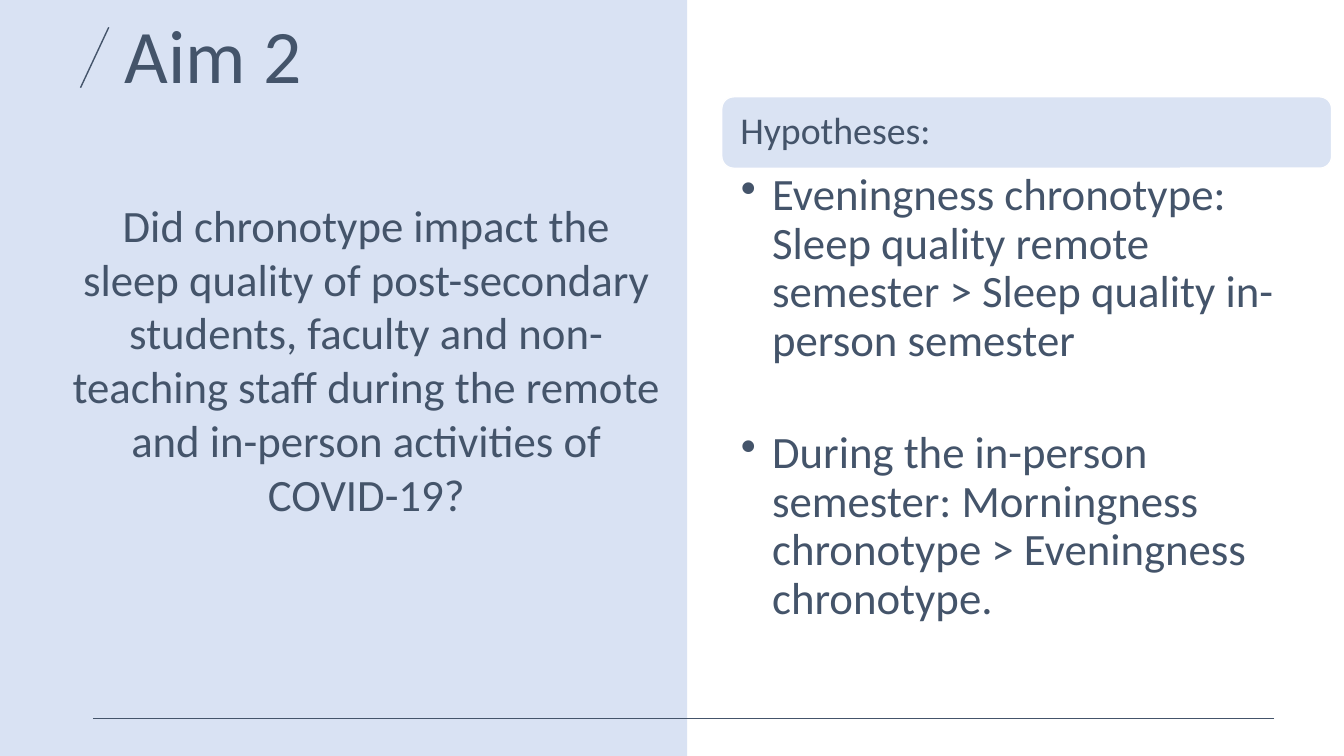
from lxml.etree import SubElement
from pptx import Presentation
from pptx.dml.color import RGBColor
from pptx.enum.shapes import MSO_CONNECTOR, MSO_SHAPE
from pptx.enum.text import MSO_ANCHOR, PP_ALIGN
from pptx.oxml.ns import qn
from pptx.util import Cm, Pt


def color(hex_string):
    return RGBColor.from_string(hex_string)


class SlideBuilder:
    font = "Calibri"
    ink = "44546A"
    accent = "4472C4"
    tint = "DAE3F3"

    def __init__(self, slide):
        self.slide = slide

    def box(self, preset, left, top, width, height, fill, opacity=100, outline=None):
        shape = self.slide.shapes.add_shape(
            preset, Cm(left), Cm(top), Cm(width), Cm(height))
        shape.shadow.inherit = False
        shape.fill.solid()
        shape.fill.fore_color.rgb = color(fill)
        if opacity < 100:
            fill_color = shape._element.spPr.find(qn("a:solidFill"))[0]
            SubElement(fill_color, qn("a:alpha"), val=str(opacity * 1000))
        if outline:
            shape.line.color.rgb = color(outline)
            shape.line.width = Pt(1)
        else:
            shape.line.fill.background()
        return shape

    def text_box(self, left, top, width, height):
        return self.slide.shapes.add_textbox(
            Cm(left), Cm(top), Cm(width), Cm(height))

    def set_text(self, shape, paragraphs, size, align=PP_ALIGN.LEFT, spacing=0.9,
                 anchor=MSO_ANCHOR.TOP, insets=(0.25, 0.13, 0.25, 0.13),
                 bullet_indent=None, gap=0):
        frame = shape.text_frame
        frame.word_wrap = True
        frame.vertical_anchor = anchor
        (frame.margin_left, frame.margin_top,
         frame.margin_right, frame.margin_bottom) = map(Cm, insets)
        frame.text = "\n".join(paragraphs)
        for paragraph in frame.paragraphs:
            paragraph.alignment = align
            paragraph.line_spacing = spacing
            paragraph.space_after = Pt(gap)
            paragraph.font.name = self.font
            paragraph.font.size = Pt(size)
            paragraph.font.color.rgb = color(self.ink)
            if bullet_indent:
                self.add_bullet(paragraph, bullet_indent)

    def add_bullet(self, paragraph, indent):
        properties = paragraph._p.get_or_add_pPr()
        properties.set("marL", str(Cm(indent)))
        properties.set("indent", str(-Cm(indent)))
        bullet = properties.makeelement(qn("a:buChar"), {"char": "•"})
        properties.find(qn("a:defRPr")).addprevious(bullet)

    def line(self, x1, y1, x2, y2):
        connector = self.slide.shapes.add_connector(
            MSO_CONNECTOR.STRAIGHT, Cm(x1), Cm(y1), Cm(x2), Cm(y2))
        connector.line.color.rgb = color(self.ink)
        connector.line.width = Pt(1)
        SubElement(connector._element.spPr, qn("a:effectLst"))


def main():
    presentation = Presentation()
    presentation.slide_width = Cm(33.87)
    presentation.slide_height = Cm(19.05)
    builder = SlideBuilder(
        presentation.slides.add_slide(presentation.slide_layouts[6]))

    # Left panel with the slide title
    builder.box(MSO_SHAPE.RECTANGLE, 0, 0, 17.32, 19.05, builder.accent, opacity=20)
    title = builder.text_box(2.9, 0.41, 13.54, 2.15)
    builder.set_text(title, ["Aim 2"], 54, anchor=MSO_ANCHOR.MIDDLE)
    builder.line(2.74, 0.69, 2.03, 2.21)

    # Hypotheses
    column_left, column_width = 18.19, 15.37
    heading = builder.box(MSO_SHAPE.ROUNDED_RECTANGLE, column_left, 2.44,
                          column_width, 1.8, builder.tint, outline="FFFFFF")
    builder.set_text(heading, ["Hypotheses:"], 27, anchor=MSO_ANCHOR.MIDDLE,
                     insets=(0.38, 0.28, 0.38, 0.28))
    hypotheses = builder.text_box(column_left, 4.24, column_width, 12.12)
    builder.set_text(hypotheses, [
        "Eveningness chronotype: Sleep quality remote semester > "
        "Sleep quality in-person semester",
        "During the in-person semester: Morningness chronotype > "
        "Eveningness chronotype.",
    ], 32, insets=(0.48, 0.1, 0.64, 0.1), bullet_indent=0.79, gap=46)

    # Footer rule
    builder.line(32.11, 18.11, 2.34, 18.11)

    # Research question
    question = builder.text_box(1.55, 4.85, column_width, 9.25)
    builder.set_text(question, [
        "Did chronotype impact the sleep quality of post-secondary students, "
        "faculty and non-teaching staff during the remote and in-person "
        "activities of COVID-19?",
    ], 32, align=PP_ALIGN.CENTER, spacing=1.0)

    presentation.save("out.pptx")


if __name__ == "__main__":
    main()
